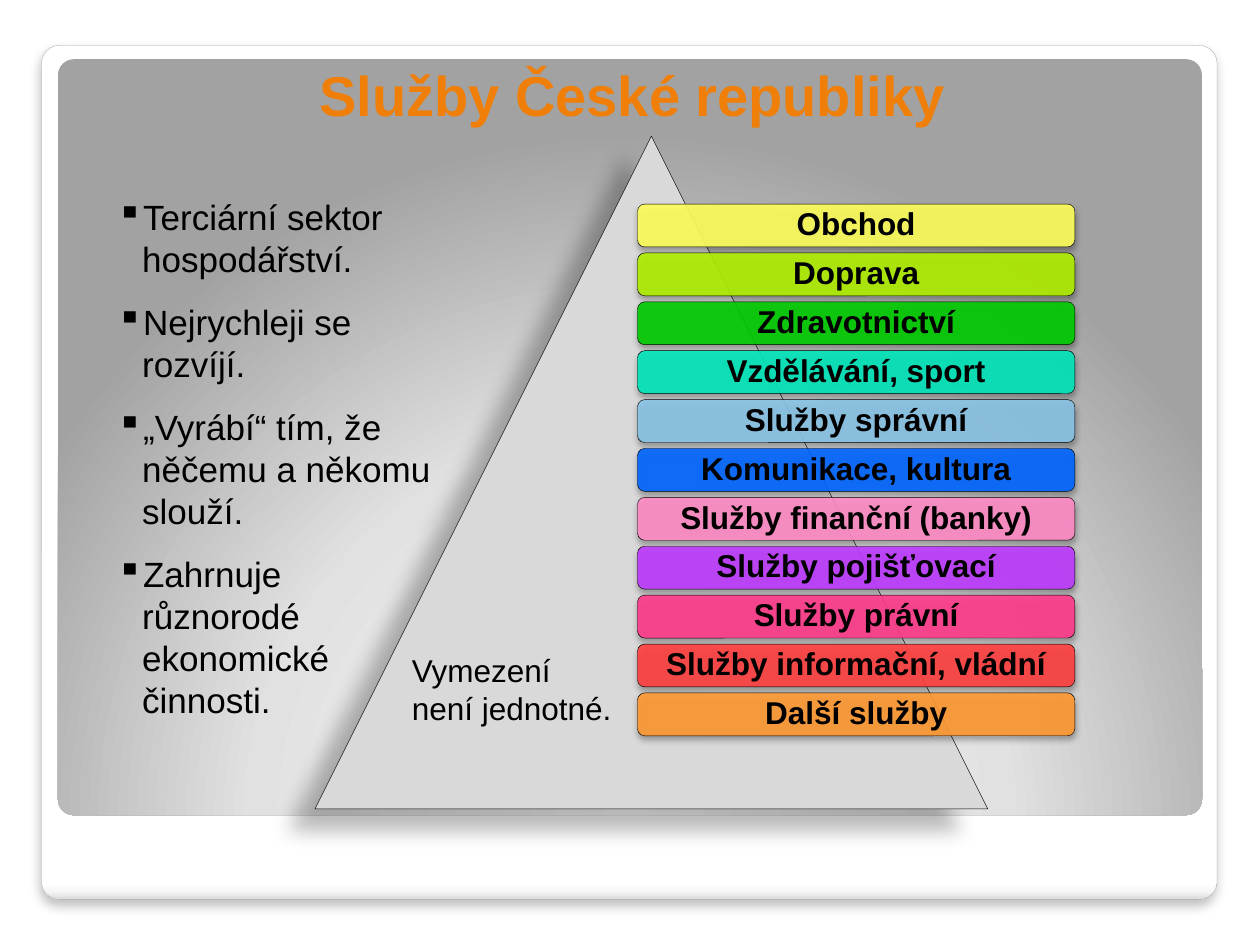
import pptx
import pptx.util
import pptx.oxml.ns
import pptx.dml.color
import pptx.enum.shapes
import pptx.enum.text
from lxml import etree

Inches = pptx.util.Inches
Pt = pptx.util.Pt
MSO = pptx.enum.shapes.MSO_SHAPE
ALIGN = pptx.enum.text.PP_ALIGN
ANCHOR = pptx.enum.text.MSO_ANCHOR
qn = pptx.oxml.ns.qn

COLORS = {
    "text": "000000", "title": "F07F09", "triangle": "D9D9D9",
    "frame_line": "A4A4A4", "white": "FFFFFF", "edge": "F7F7F7",
    "rim": "DADADA", "light": "E1E1E1", "grey": "A2A2A2",
    "yellow": "FFFF5B", "lime": "B0EE00", "green": "00CC00",
    "teal": "00E6BA", "sky": "89C3E5", "blue": "0066FF",
    "pink": "FF8BC5", "violet": "BE3BFF", "rose": "FF3B8A",
    "red": "FF3F3F", "orange": "FF9933",
}
SERVICES = [
    ("Obchod", "yellow"), ("Doprava", "lime"), ("Zdravotnictví", "green"),
    ("Vzdělávání, sport", "teal"), ("Služby správní", "sky"),
    ("Komunikace, kultura", "blue"), ("Služby finanční (banky)", "pink"),
    ("Služby pojišťovací", "violet"), ("Služby právní", "rose"),
    ("Služby informační, vládní", "red"), ("Další služby", "orange"),
]
FACTS = [
    "Terciární sektor \nhospodářství.",
    "Nejrychleji se \nrozvíjí.",
    "„Vyrábí“ tím, že \nněčemu a někomu\nslouží.",
    "Zahrnuje \nrůznorodé\nekonomické \nčinnosti.",
]


def rgb(name):
    return pptx.dml.color.RGBColor.from_string(COLORS[name])


def apply(obj, values):
    for key, value in values.items():
        setattr(obj, key, value)


def add_color(parent, name, alpha=None):
    clr = etree.SubElement(parent, qn("a:srgbClr"), val=COLORS[name])
    if alpha is not None:
        etree.SubElement(clr, qn("a:alpha"), val=str(alpha * 1000))


def set_gradient(sp, stops, focus=None):
    grad = etree.Element(qn("a:gradFill"))
    gs_list = etree.SubElement(grad, qn("a:gsLst"))
    for pos, name in stops:
        add_color(etree.SubElement(gs_list, qn("a:gs"), pos=str(pos * 1000)), name)
    if focus:
        shade = etree.SubElement(grad, qn("a:path"), {"path": "circle"})
        sides = {side: str(v * 1000) for side, v in zip("ltrb", focus)}
        etree.SubElement(shade, qn("a:fillToRect"), sides)
    else:
        etree.SubElement(grad, qn("a:lin"), ang="5400000", scaled="0")
    sp.element.spPr.find(qn("a:prstGeom")).addnext(grad)


def set_shadow(sp, alpha, blur, dist, angle):
    effects = sp.element.spPr.find(qn("a:effectLst"))
    shadow = etree.SubElement(
        effects, qn("a:outerShdw"), blurRad=str(Pt(blur)), dist=str(Pt(dist)),
        dir=str(angle * 60000), algn="ctr", rotWithShape="0")
    add_color(shadow, "text", alpha)


def add_shape(s, kind, box, fill=None, alpha=None, line=None, width=0.25):
    sp = s.shapes.add_shape(kind, *map(Inches, box))
    sp.shadow.inherit = False
    if fill:
        sp.fill.solid()
        sp.fill.fore_color.rgb = rgb(fill)
    if alpha:
        clr = sp.element.spPr.find(qn("a:solidFill"))[0]
        etree.SubElement(clr, qn("a:alpha"), val=str(alpha * 1000))
    if line:
        sp.line.color.rgb = rgb(line)
        sp.line.width = Pt(width)
    else:
        sp.line.fill.background()
    return sp


def write(p, text, size, color="text", bold=False):
    p.text = text
    for r in p.runs:
        apply(r.font, {"name": "Arial", "size": Pt(size), "bold": bold})
        r.font.color.rgb = rgb(color)


def add_background(s, outer, inner):
    frame = add_shape(s, MSO.ROUNDED_RECTANGLE, outer, line="frame_line", width=0.16)
    set_gradient(frame, [(0, "white"), (98, "white"), (99, "edge"), (100, "rim")])
    set_shadow(frame, 25, 6, 4, 90)
    panel = add_shape(s, MSO.ROUNDED_RECTANGLE, inner)
    set_gradient(panel, [(0, "white"), (55, "light"), (100, "grey")], (50, 175, 50, -75))
    for sp in (frame, panel):
        sp.adjustments[0] = 0.021


def add_title(s, box, text):
    title = s.shapes.title
    apply(title, dict(zip(("left", "top", "width", "height"), map(Inches, box))))
    tf = title.text_frame
    apply(tf, {"vertical_anchor": ANCHOR.BOTTOM, "word_wrap": True})
    p = tf.paragraphs[0]
    p.alignment = ALIGN.CENTER
    write(p, text, 32, "title", True)
    title.element.getparent().append(title.element)


def add_facts(s, box, facts):
    tf = s.shapes.add_textbox(*map(Inches, box)).text_frame
    tf.word_wrap = False
    for i, fact in enumerate(facts):
        p = tf.add_paragraph() if i else tf.paragraphs[0]
        write(p, fact, 20)
        p.space_after = Pt(12)
        props = p._p.get_or_add_pPr()
        props.set("marL", str(Inches(0.2)))
        props.set("indent", str(Inches(-0.2)))
        etree.SubElement(props, qn("a:buChar"), char="▪")


def add_pyramid(s, box, services):
    left, top, width, height = box
    triangle = add_shape(s, MSO.ISOSCELES_TRIANGLE, box, "triangle", line="text")
    set_shadow(triangle, 28, 11.8, 19.7, 141)
    bar_left, bar_top = left + 2.56, top + 0.54
    bar_width, bar_height = 0.65 * width, 0.34
    pitch = 3.88 / (len(services) - 1)
    for i, (name, color) in enumerate(services):
        bar = add_shape(s, MSO.ROUNDED_RECTANGLE,
                        (bar_left, bar_top + i * pitch, bar_width, bar_height),
                        color, 90, "text")
        set_shadow(bar, 32, 3.5, 2.2, 90)
        tf = bar.text_frame
        apply(tf, {"vertical_anchor": ANCHOR.MIDDLE, "word_wrap": True,
                   "margin_left": Inches(0.07), "margin_right": Inches(0.07),
                   "margin_top": 0, "margin_bottom": 0})
        p = tf.paragraphs[0]
        apply(p, {"alignment": ALIGN.CENTER, "line_spacing": 0.9})
        write(p, name, 18, bold=True)


def add_note(s, box, text):
    tf = s.shapes.add_textbox(*map(Inches, box)).text_frame
    tf.word_wrap = False
    write(tf.paragraphs[0], text, 18)


def main():
    prs = pptx.Presentation()
    apply(prs, {"slide_width": Inches(10), "slide_height": Inches(7.5)})
    s = prs.slides.add_slide(prs.slide_layouts[5])
    add_background(s, (0.33, 0.36, 9.33, 6.78), (0.46, 0.47, 9.08, 6))
    add_title(s, (1.18, 0.39, 7.68, 0.67), "Služby České republiky")
    add_facts(s, (0.83, 1.5, 2.71, 4.31), FACTS)
    add_pyramid(s, (2.5, 1.08, 5.34, 5.34), SERVICES)
    add_note(s, (3.17, 5.12, 1.8, 0.71), "Vymezení\nnení jednotné.")
    prs.save("out.pptx")


if __name__ == "__main__":
    main()
